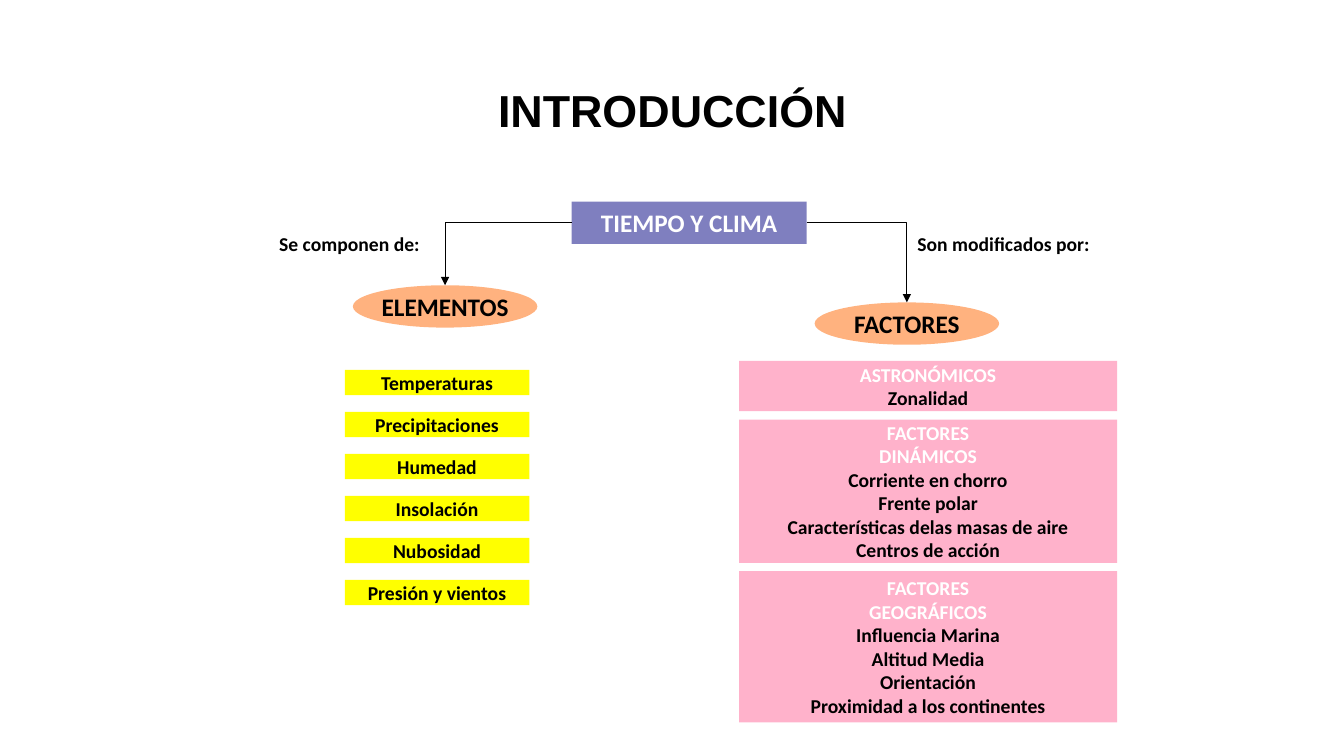
from dataclasses import dataclass

from lxml.etree import SubElement
from pptx import Presentation
from pptx.dml.color import RGBColor
from pptx.enum.shapes import MSO_CONNECTOR as Link, MSO_SHAPE as Form
from pptx.enum.text import MSO_ANCHOR as Anchor, MSO_AUTO_SIZE as Fit, PP_ALIGN as Align
from pptx.oxml.ns import qn
from pptx.util import Inches, Pt

HEADING = "INTRODUCCIÓN"
TOPIC = "TIEMPO Y CLIMA"
BRANCHES = [
    dict(name="ELEMENTOS", left=3.5, top=2.83, side=1, relation="Se componen de:", label=(2.67, 2.25, 1.6, 0.34)),
    dict(name="FACTORES", left=8.08, top=3, side=3, relation="Son modificados por:", label=(9, 2.25, 1.92, 0.34)),
]
ELEMENTS = ["Temperaturas", "Precipitaciones", "Humedad", "Insolación", "Nubosidad", "Presión y vientos"]
FACTORS = [
    (0.5, ["ASTRONÓMICOS"], ["Zonalidad"]),
    (1.42, ["FACTORES", "DINÁMICOS"],
     ["Corriente en chorro", "Frente polar", "Características delas masas de aire", "Centros de acción"]),
    (1.5, ["FACTORES", "GEOGRÁFICOS"],
     ["Influencia Marina", "Altitud Media", "Orientación", "Proximidad a los continentes"]),
]


@dataclass(frozen=True)
class Theme:
    ink: str = "000000"
    light: str = "FFFFFF"
    topic: str = "000080"
    branch: str = "FF6600"
    element: str = "FFFF00"
    factor: str = "FF6699"
    heading_font: str = "Arial"
    body_font: str = "Calibri"
    heading_size: int = 32
    node_size: int = 18
    body_size: int = 14


THEME = Theme()


def write(frame, lines, size=THEME.body_size, font=THEME.body_font, color=THEME.ink,
          align=Align.CENTER, anchor=Anchor.MIDDLE, wrap=False, light_lines=0, spacing=None):
    frame.word_wrap = wrap
    frame.vertical_anchor = anchor
    for index, line in enumerate(lines):
        paragraph = frame.paragraphs[0] if index == 0 else frame.add_paragraph()
        paragraph.alignment = align
        if spacing:
            paragraph.line_spacing = spacing
        run = paragraph.add_run()
        run.text = line
        run.font.name, run.font.size, run.font.bold = font, Pt(size), True
        run.font.color.rgb = RGBColor.from_string(THEME.light if index < light_lines else color)


def add_node(shapes, form, place, lines, fill, opacity=100, **text_format):
    node = shapes.add_shape(form, *map(Inches, place))
    node.shadow.inherit = False
    node.line.fill.background()
    node.fill.solid()
    node.fill.fore_color.rgb = RGBColor.from_string(fill)
    if opacity < 100:
        tint = node.fill._xPr.find(".//" + qn("a:srgbClr"))
        SubElement(tint, qn("a:alpha")).set("val", str(opacity * 1000))
    write(node.text_frame, lines, **text_format)
    return node


def add_arrow(shapes, topic, side, branch):
    start_x = topic.left if side == 1 else topic.left + topic.width
    arrow = shapes.add_connector(Link.ELBOW, start_x, topic.top + topic.height // 2,
                                 branch.left + branch.width // 2, branch.top)
    arrow.begin_connect(topic, side)
    arrow.end_connect(branch, 0)
    arrow.line.width = Pt(0.75)
    arrow.line.color.rgb = RGBColor.from_string(THEME.ink)
    properties = arrow._element.spPr
    properties.find(qn("a:prstGeom")).set("prst", "bentConnector2")
    SubElement(properties.find(qn("a:ln")), qn("a:tailEnd")).set("type", "triangle")
    SubElement(properties, qn("a:effectLst"))


def main():
    deck = Presentation()
    deck.slide_width, deck.slide_height = Inches(13.33), Inches(7.5)
    slide = deck.slides.add_slide(deck.slide_layouts[5])
    shapes = slide.shapes

    heading = shapes.title
    heading.left, heading.top, heading.width, heading.height = map(Inches, (0.92, 0.4, 11.5, 1.45))
    heading.text_frame.auto_size = Fit.NONE
    write(heading.text_frame, [HEADING], size=THEME.heading_size, font=THEME.heading_font,
          wrap=True, spacing=0.9)

    topic = add_node(shapes, Form.RECTANGLE, (5.67, 2, 2.33, 0.42), [TOPIC], THEME.topic,
                     opacity=50, size=THEME.node_size, color=THEME.light)

    element_group = shapes.add_group_shape()
    for row, element in enumerate(ELEMENTS):
        add_node(element_group.shapes, Form.RECTANGLE, (3.42, 3.67 + row * 5 / 12, 1.83, 0.25),
                 [element], THEME.element)

    factor_top = 3.58
    for height, titles, details in FACTORS:
        add_node(shapes, Form.RECTANGLE, (7.33, factor_top, 3.75, height), titles + details,
                 THEME.factor, opacity=50, light_lines=len(titles))
        factor_top += height + 1 / 12

    for branch in BRANCHES:
        oval = add_node(shapes, Form.OVAL, (branch["left"], branch["top"], 1.83, 0.42),
                        [branch["name"]], THEME.branch, opacity=50, size=THEME.node_size)
        relation = shapes.add_textbox(*map(Inches, branch["label"])).text_frame
        relation.auto_size = Fit.SHAPE_TO_FIT_TEXT
        write(relation, [branch["relation"]], align=Align.LEFT, anchor=Anchor.TOP)
        add_arrow(shapes, topic, branch["side"], oval)

    deck.save("out.pptx")


if __name__ == "__main__":
    main()
